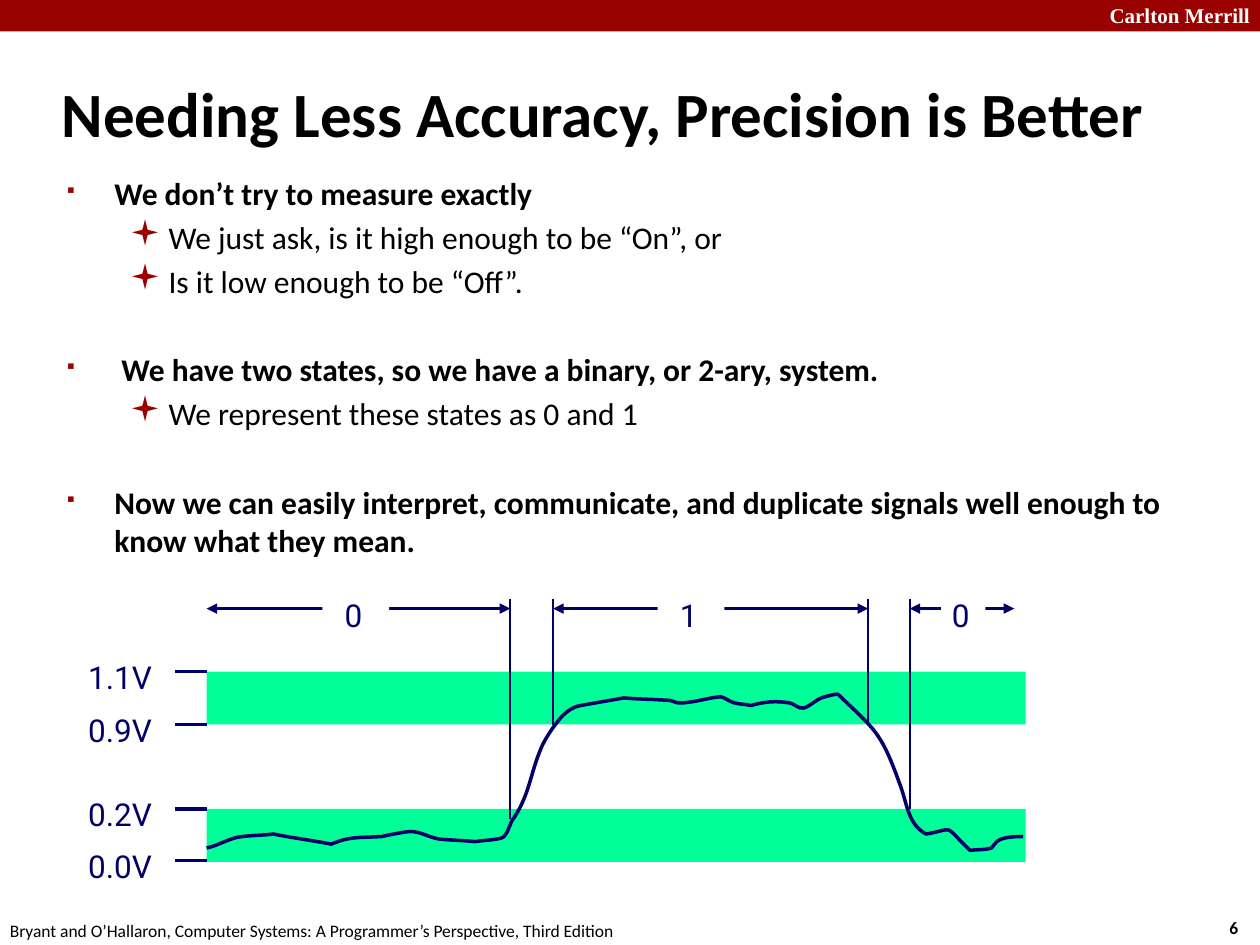
from lxml.etree import SubElement
from pptx import Presentation
from pptx.dml.color import RGBColor
from pptx.enum.shapes import MSO_CONNECTOR as Connector, MSO_SHAPE as Shape
from pptx.enum.text import MSO_ANCHOR as Anchor, MSO_AUTO_SIZE as AutoSize, PP_ALIGN as Align
from pptx.oxml.ns import qn
from pptx.util import Inches, Pt

RED, NAVY, GREEN, WHITE, BLACK = "990000", "000066", "00FF99", "FFFFFF", "000000"
TITLE = "Needing Less Accuracy, Precision is Better"
HEADER = "Carlton Merrill"
FOOTER = "Bryant and O’Hallaron, Computer Systems: A Programmer’s Perspective, Third Edition"
PAGE = "6"
BULLETS = [
    (0, 3.6, "We don’t try to measure exactly"),
    (1, 3.6, "We just ask, is it high enough to be “On”, or"),
    (1, 3.6, "Is it low enough to be “Off”."),
    (0, 28.9, " We have two states, so we have a binary, or 2-ary, system."),
    (1, 3.6, "We represent these states as 0 and 1"),
    (0, 28.9, "Now we can easily interpret, communicate, and duplicate signals "
              "well enough to know what they mean."),
]
BULLET_STYLES = [
    {"left": 0.38, "hang": 0.38, "char": "■", "font": "Wingdings 2", "percent": 60, "bold": True},
    {"left": 0.81, "hang": 0.31, "char": "▪", "font": "Wingdings", "percent": 110, "bold": False},
]
BAND_LEFT, BAND_WIDTH, BAND_HEIGHT = 1.64, 6.5, 0.42
BAND_TOPS = [6.42, 5.33]
LEVELS = [("1.1V", 5.33), ("0.9V", 5.75), ("0.2V", 6.42), ("0.0V", 6.83)]
PERIODS = [("0", 1.64, 4.05, 2.56, 0.53), ("1", 4.39, 6.89, 5.22, 0.53),
           ("0", 7.22, 8.05, 7.47, 0.35)]
PERIOD_Y, MARKER_TOP = 4.83, 4.75
MARKERS = [(4.05, 6.5), (4.39, 5.75), (6.89, 5.75), (7.22, 6.42)]
SIGNAL_START = (1.64, 6.73)
SIGNAL_CURVES = [
    (1.74, 6.71, 1.82, 6.65, 1.92, 6.64), (2, 6.63, 2.09, 6.63, 2.17, 6.62),
    (2.32, 6.65, 2.47, 6.67, 2.63, 6.7), (2.77, 6.64, 2.83, 6.65, 3.03, 6.64),
    (3.07, 6.63, 3.22, 6.6, 3.26, 6.6), (3.34, 6.6, 3.41, 6.65, 3.49, 6.66),
    (3.58, 6.67, 3.68, 6.67, 3.77, 6.68), (3.83, 6.67, 3.89, 6.67, 3.94, 6.66),
    (3.96, 6.66, 3.99, 6.65, 4, 6.64), (4.04, 6.6, 4.04, 6.54, 4.08, 6.49),
    (4.2, 6.31, 4.21, 6.14, 4.29, 5.95), (4.32, 5.87, 4.39, 5.77, 4.44, 5.71),
    (4.48, 5.66, 4.54, 5.61, 4.61, 5.6), (4.72, 5.58, 4.95, 5.54, 4.95, 5.54),
    (5.07, 5.55, 5.19, 5.55, 5.32, 5.56), (5.34, 5.56, 5.36, 5.58, 5.39, 5.58),
    (5.5, 5.58, 5.61, 5.54, 5.72, 5.53), (5.76, 5.54, 5.79, 5.57, 5.83, 5.58),
    (5.87, 5.59, 5.92, 5.59, 5.96, 5.6), (6.07, 5.57, 6.15, 5.56, 6.27, 5.58),
    (6.31, 5.59, 6.34, 5.63, 6.38, 5.62), (6.44, 5.6, 6.49, 5.54, 6.55, 5.53),
    (6.59, 5.52, 6.62, 5.51, 6.65, 5.51), (6.94, 5.79, 6.99, 5.8, 7.14, 6.22),
    (7.2, 6.37, 7.2, 6.54, 7.35, 6.62), (7.59, 6.58, 7.47, 6.53, 7.7, 6.75),
    (7.75, 6.74, 7.81, 6.75, 7.87, 6.73), (7.89, 6.72, 7.89, 6.69, 7.91, 6.68),
    (7.96, 6.64, 8.06, 6.64, 8.12, 6.64),
]
LABEL_INSETS = (0.06, 0.06, 0.1, 0.06)


def rgb(color):
    return RGBColor.from_string(color)


def style(paragraph, size, color, font="Calibri", bold=False, align=Align.LEFT):
    paragraph.font.size, paragraph.font.name, paragraph.font.bold = Pt(size), font, bold
    paragraph.font.color.rgb = rgb(color)
    paragraph.alignment = align


def place(shape, left, top, width, height):
    shape.left, shape.top = Inches(left), Inches(top)
    shape.width, shape.height = Inches(width), Inches(height)


def write(shape, text, size, color, insets=(0.1, 0.05, 0.1, 0.05), anchor=Anchor.TOP, **options):
    frame = shape.text_frame
    frame.word_wrap, frame.auto_size, frame.vertical_anchor = True, AutoSize.NONE, anchor
    (frame.margin_left, frame.margin_top,
     frame.margin_right, frame.margin_bottom) = map(Inches, insets)
    frame.text = text
    style(frame.paragraphs[0], size, color, **options)


def add_text(slide, box, text, size, color, **options):
    write(slide.shapes.add_textbox(*map(Inches, box)), text, size, color, **options)


def add_rectangle(slide, box, color):
    shape = slide.shapes.add_shape(Shape.RECTANGLE, *map(Inches, box))
    shape.shadow.inherit = False
    shape.fill.solid()
    shape.fill.fore_color.rgb = rgb(color)
    shape.line.fill.background()
    return shape


def add_line(slide, start, end, width, arrows=False):
    line = slide.shapes.add_connector(Connector.STRAIGHT, *map(Inches, start + end))
    line.line.color.rgb, line.line.width = rgb(NAVY), Pt(width)
    if arrows:
        for tag in ("a:headEnd", "a:tailEnd"):
            SubElement(line.line._get_or_add_ln(), qn(tag), type="triangle")
    SubElement(line._element.spPr, qn("a:effectLst"))


def add_bullet(paragraph, look):
    properties = paragraph._p.get_or_add_pPr()
    properties.set("marL", str(Inches(look["left"])))
    properties.set("indent", str(-Inches(look["hang"])))
    SubElement(SubElement(properties, qn("a:buClr")), qn("a:srgbClr"), val=RED)
    SubElement(properties, qn("a:buSzPct"), val=str(look["percent"] * 1000))
    SubElement(properties, qn("a:buFont"), typeface=look["font"], charset="2")
    SubElement(properties, qn("a:buChar"), char=look["char"])


def add_bullets(slide):
    frame = slide.shapes.add_textbox(*map(Inches, (0.43, 1.33, 9.4, 5.92))).text_frame
    frame.word_wrap = True
    for index, (level, gap, text) in enumerate(BULLETS):
        paragraph = frame.add_paragraph() if index else frame.paragraphs[0]
        look = BULLET_STYLES[level]
        paragraph.text, paragraph.level, paragraph.space_before = text, level, Pt(gap)
        add_bullet(paragraph, look)
        style(paragraph, 18, BLACK, bold=look["bold"])


def add_signal(slide):
    """Draw the signal as one open outline of cubic Bézier segments."""
    builder = slide.shapes.build_freeform(*map(Inches, SIGNAL_START))
    builder.add_line_segments([tuple(map(Inches, curve[4:])) for curve in SIGNAL_CURVES],
                              close=False)
    signal = builder.convert_to_shape()
    segments = list(signal._element.iter(qn("a:lnTo")))
    for segment, curve in zip(segments, SIGNAL_CURVES):
        segment.tag = qn("a:cubicBezTo")
        segment.clear()
        for x, y in zip(curve[::2], curve[1::2]):
            SubElement(segment, qn("a:pt"), x=str(Inches(x) - signal.left),
                       y=str(Inches(y) - signal.top))
    signal.shadow.inherit = False
    signal.fill.background()
    signal.line.color.rgb, signal.line.width = rgb(NAVY), Pt(2)


def add_diagram(slide):
    label = {"size": 18, "color": NAVY, "font": "Roboto", "insets": LABEL_INSETS}
    for top in BAND_TOPS:
        add_rectangle(slide, (BAND_LEFT, top, BAND_WIDTH, BAND_HEIGHT), GREEN)
    add_signal(slide)
    for text, y in LEVELS:
        add_line(slide, (BAND_LEFT, y), (BAND_LEFT - 0.25, y), 2)
        add_text(slide, (0.64, y - 0.17, 0.69, 0.41), text, **label)
    for _, start, end, _, _ in PERIODS:
        add_line(slide, (start, PERIOD_Y), (end, PERIOD_Y), 2, arrows=True)
    for x, bottom in MARKERS:
        add_line(slide, (x, MARKER_TOP), (x, bottom), 1)
    for text, _, _, left, width in PERIODS:
        box = add_rectangle(slide, (left, 4.67, width, 0.42), WHITE)
        write(box, text, align=Align.CENTER, **label)


def main():
    presentation = Presentation()
    presentation.slide_width, presentation.slide_height = Inches(10), Inches(7.5)
    slide = presentation.slides.add_slide(presentation.slide_layouts[5])
    add_rectangle(slide, (0, 0, 10, 0.25), RED)
    add_text(slide, (8.64, -0.03, 1.38, 0.3), HEADER, 12, WHITE,
             font="Times New Roman", bold=True, align=Align.RIGHT)
    add_text(slide, (9.66, 7.23, 0.37, 0.27), PAGE, 10, BLACK, bold=True)
    add_text(slide, (-0.02, 7.25, 5.08, 0.27), FOOTER, 10, BLACK)
    place(slide.shapes.title, 0.39, 0.48, 9.03, 0.83)
    write(slide.shapes.title, TITLE, 36, BLACK, anchor=Anchor.MIDDLE, bold=True)
    add_bullets(slide)
    add_diagram(slide)
    presentation.save("out.pptx")


if __name__ == "__main__":
    main()
